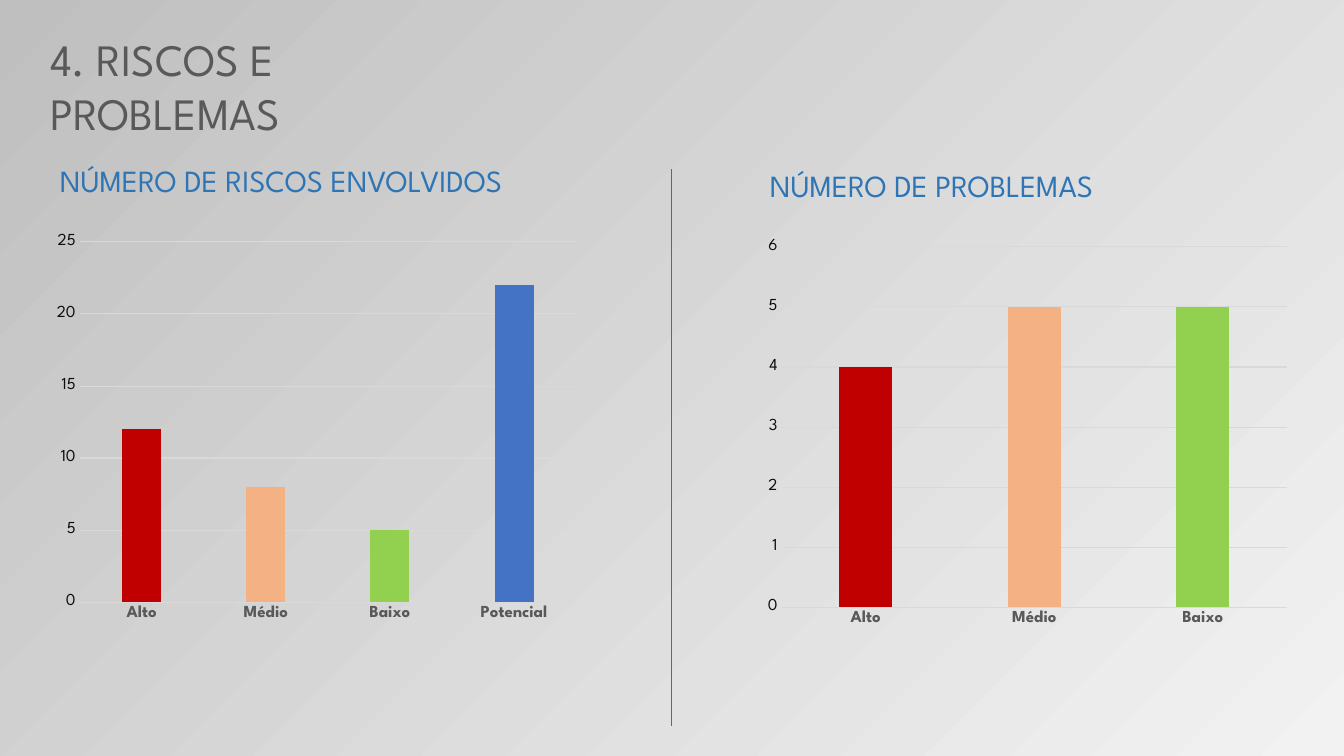
from dataclasses import dataclass

from pptx import Presentation
from pptx.chart.data import CategoryChartData
from pptx.dml.color import RGBColor
from pptx.enum.chart import XL_CHART_TYPE, XL_TICK_MARK
from pptx.enum.shapes import MSO_CONNECTOR
from pptx.enum.text import MSO_ANCHOR, MSO_AUTO_SIZE, PP_ALIGN
from pptx.oxml.ns import qn
from pptx.slide import Slide
from pptx.util import Emu, Pt

CLUSTERED = XL_CHART_TYPE.COLUMN_CLUSTERED
NO_TICK = XL_TICK_MARK.NONE
STRAIGHT = MSO_CONNECTOR.STRAIGHT
TOP = MSO_ANCHOR.TOP
GROW = MSO_AUTO_SIZE.SHAPE_TO_FIT_TEXT
LEFT = PP_ALIGN.LEFT

EMU_PER_PX = 914400 / 100.8
FONT = "League Spartan"
TITLE_LAYOUT = 5

BLACK = RGBColor(0x00, 0x00, 0x00)
NEAR_BLACK = RGBColor(0x0D, 0x0D, 0x0D)
DARK_GRAY = RGBColor(0x59, 0x59, 0x59)
GRID_GRAY = RGBColor(0xD9, 0xD9, 0xD9)
HEADING_BLUE = RGBColor(0x2E, 0x75, 0xB6)
BACKGROUND_LIGHT = RGBColor(0xF2, 0xF2, 0xF2)
BACKGROUND_DARK = RGBColor(0xBF, 0xBF, 0xBF)
LEVEL_COLORS = {
    "Alto": RGBColor(0xC0, 0x00, 0x00),
    "Médio": RGBColor(0xF4, 0xB1, 0x83),
    "Baixo": RGBColor(0x92, 0xD0, 0x50),
    "Potencial": RGBColor(0x44, 0x72, 0xC4),
}


@dataclass(frozen=True)
class Box:
    left: int
    top: int
    width: int
    height: int

    def emu(self) -> tuple[Emu, ...]:
        return tuple(px(v) for v in (self.left, self.top, self.width, self.height))


@dataclass(frozen=True)
class Panel:
    heading: str
    heading_box: Box
    chart_box: Box
    counts: dict[str, int]


PANELS = (
    Panel("NÚMERO DE RISCOS ENVOLVIDOS", Box(50, 157, 558, 47), Box(46, 226, 541, 404),
          {"Alto": 12, "Médio": 8, "Baixo": 5, "Potencial": 22}),
    Panel("NÚMERO DE PROBLEMAS", Box(760, 162, 448, 47), Box(757, 231, 541, 404),
          {"Alto": 4, "Médio": 5, "Baixo": 5}),
)


def px(value: int) -> Emu:
    return Emu(round(value * EMU_PER_PX))


def style_font(font, size: int, color: RGBColor, bold: bool = False) -> None:
    font.name = FONT
    font.size = Pt(size)
    font.color.rgb = color
    font.bold = bold


def write_text(shape, text: str, size: int, color: RGBColor) -> None:
    frame = shape.text_frame
    frame.text = text
    frame.word_wrap = True
    frame.auto_size = GROW
    frame.vertical_anchor = TOP
    paragraph = frame.paragraphs[0]
    paragraph.alignment = LEFT
    style_font(paragraph.font, size, color)


def paint_background(slide: Slide) -> None:
    fill = slide.background.fill
    fill.gradient()
    fill.gradient_angle = 135
    light, dark = fill.gradient_stops
    light.color.rgb = BACKGROUND_LIGHT
    dark.color.rgb = BACKGROUND_DARK
    light_color = next(slide.element.iter(qn("a:srgbClr")))
    light_color.makeelement(qn("a:alpha"))
    alpha = light_color.makeelement(qn("a:alpha"), {"val": "40000"})
    light_color.append(alpha)


def style_axes(chart) -> None:
    category_axis, value_axis = chart.category_axis, chart.value_axis
    for axis in (category_axis, value_axis):
        axis.major_tick_mark = NO_TICK
        axis.minor_tick_mark = NO_TICK
    style_font(category_axis.tick_labels.font, 12, DARK_GRAY, bold=True)
    style_font(value_axis.tick_labels.font, 12, NEAR_BLACK)
    value_axis.format.line.fill.background()
    for line in (category_axis.format.line, value_axis.major_gridlines.format.line):
        line.color.rgb = GRID_GRAY
        line.width = Pt(0.75)


def add_panel(slide: Slide, panel: Panel) -> None:
    data = CategoryChartData()
    data.categories = list(panel.counts)
    data.add_series("Series 1", list(panel.counts.values()))
    chart = slide.shapes.add_chart(CLUSTERED, *panel.chart_box.emu(), data).chart
    chart.has_title = False
    chart.has_legend = False
    style_font(chart.font, 10, BLACK)
    style_axes(chart)

    plot = chart.plots[0]
    plot.vary_by_categories = False
    plot.gap_width = 219
    plot.overlap = -5
    series = plot.series[0]
    series.invert_if_negative = False
    series.format.fill.solid()
    series.format.fill.fore_color.rgb = LEVEL_COLORS["Potencial"]
    for index, level in enumerate(panel.counts):
        fill = series.points[index].format.fill
        fill.solid()
        fill.fore_color.rgb = LEVEL_COLORS[level]

    heading = slide.shapes.add_textbox(*panel.heading_box.emu())
    write_text(heading, panel.heading, 22, HEADING_BLUE)


def add_title(slide: Slide) -> None:
    title = slide.shapes.title
    title.left, title.top, title.width, title.height = Box(40, 27, 437, 65).emu()
    write_text(title, "4. RISCOS E PROBLEMAS", 32, DARK_GRAY)


def add_divider(slide: Slide) -> None:
    divider = slide.shapes.add_connector(STRAIGHT, px(671), px(169), px(671), px(726))
    divider.line.color.rgb = HEADING_BLUE
    divider.line.width = Pt(0.5)
    properties = divider.element.spPr
    properties.append(properties.makeelement(qn("a:effectLst")))


def main() -> None:
    presentation = Presentation()
    presentation.slide_width = px(1344)
    presentation.slide_height = px(756)
    slide = presentation.slides.add_slide(presentation.slide_layouts[TITLE_LAYOUT])
    paint_background(slide)
    for panel in PANELS:
        add_panel(slide, panel)
    add_title(slide)
    add_divider(slide)
    presentation.save("out.pptx")


if __name__ == "__main__":
    main()
